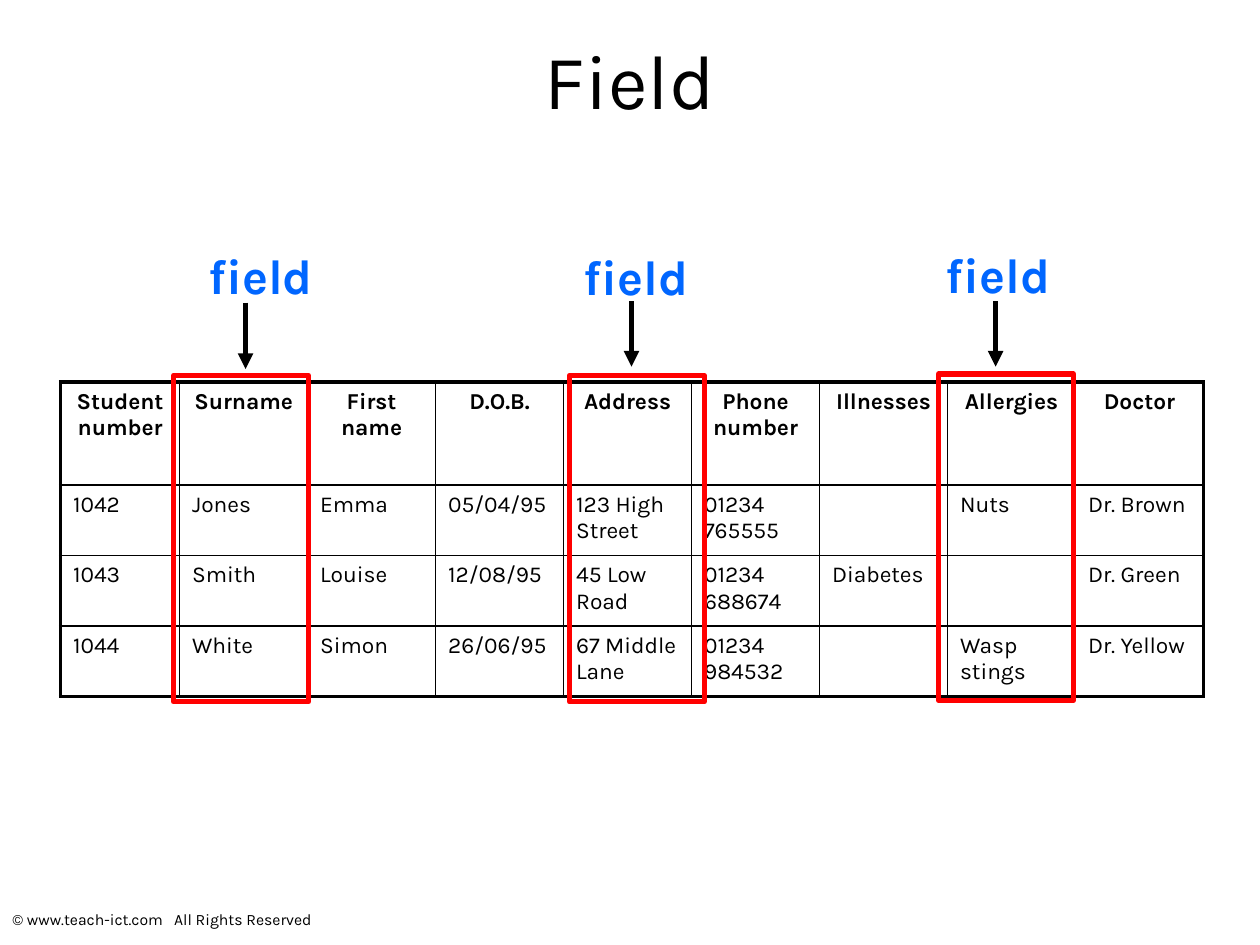
from dataclasses import dataclass

from lxml.etree import SubElement
from pptx import Presentation
from pptx.dml.color import RGBColor
from pptx.enum.shapes import MSO_CONNECTOR, MSO_SHAPE
from pptx.enum.text import MSO_ANCHOR, PP_ALIGN
from pptx.oxml.ns import qn
from pptx.slide import Slide
from pptx.table import _Cell
from pptx.text.text import _Paragraph
from pptx.util import Cm, Pt

FONT = "Karla"
BLACK, RED, BLUE = "000000", "FF0000", "0066FF"
OUTER_BORDER, INNER_BORDER = Pt(2.25), Pt(1)

FIRST_COLUMN_WIDTH, COLUMN_WIDTH = 2.4, 2.58
HEADER_HEIGHT, ROW_HEIGHT = 2.08, 1.42
RECORDS = [
    ["Student number", "Surname", "First name", "D.O.B.", "Address",
     "Phone number", "Illnesses", "Allergies", "Doctor"],
    ["1042", "Jones", "Emma", "05/04/95", "123 High Street",
     "01234 765555", "", "Nuts", "Dr. Brown"],
    ["1043", "Smith", "Louise", "12/08/95", "45 Low Road",
     "01234 688674", "Diabetes", "", "Dr. Green"],
    ["1044", "White", "Simon", "26/06/95", "67 Middle Lane",
     "01234 984532", "", "Wasp stings", "Dr. Yellow"],
]


@dataclass
class FieldMarker:
    """A highlighted column with its label and arrow, in centimetres."""
    frame_left: float
    frame_top: float
    label_left: float
    label_top: float
    arrow_x: float
    arrow_top: float
    arrow_bottom: float


MARKERS = [
    FieldMarker(3.5, 7.57, 3.4, 4.83, 4.95, 6.1, 7.44),
    FieldMarker(11.48, 7.57, 10.97, 4.85, 12.73, 6.07, 7.39),
    FieldMarker(18.92, 7.54, 18.26, 4.8, 20.07, 6.07, 7.39),
]


def color(value: str) -> RGBColor:
    return RGBColor.from_string(value)


def style_paragraph(paragraph: _Paragraph, size: float, value: str = BLACK,
                    bold: bool = False, align: PP_ALIGN = PP_ALIGN.LEFT) -> None:
    paragraph.alignment = align
    font = paragraph.font
    font.name, font.size, font.bold = FONT, Pt(size), bold
    font.color.rgb = color(value)


def add_text(slide: Slide, text: str, left: float, top: float, width: float,
             height: float, size: float, **style) -> None:
    box = slide.shapes.add_textbox(Cm(left), Cm(top), Cm(width), Cm(height))
    box.text_frame.word_wrap = True
    box.text_frame.text = text
    style_paragraph(box.text_frame.paragraphs[0], size, **style)


def set_borders(cell: _Cell, outer_sides: dict[str, bool]) -> None:
    """Draw each side thick where it lies on the table's edge, else thin."""
    properties = cell._tc.get_or_add_tcPr()
    for side, is_outer in outer_sides.items():
        width = OUTER_BORDER if is_outer else INNER_BORDER
        line = SubElement(properties, qn(f"a:{side}"), w=str(int(width)))
        fill = SubElement(line, qn("a:solidFill"))
        SubElement(fill, qn("a:srgbClr"), val=BLACK)


def add_records_table(slide: Slide) -> None:
    last_row, last_column = len(RECORDS) - 1, len(RECORDS[0]) - 1
    widths = [FIRST_COLUMN_WIDTH] + [COLUMN_WIDTH] * last_column
    heights = [HEADER_HEIGHT] + [ROW_HEIGHT] * last_row
    table = slide.shapes.add_table(
        len(heights), len(widths), Cm(1.22), Cm(7.7),
        Cm(sum(widths)), Cm(sum(heights))).table
    table.first_row = table.horz_banding = False
    for column, width in zip(table.columns, widths):
        column.width = Cm(width)
    for row, height in zip(table.rows, heights):
        row.height = Cm(height)

    for row_index, record in enumerate(RECORDS):
        is_header = row_index == 0
        for column_index, text in enumerate(record):
            cell = table.cell(row_index, column_index)
            cell.text = text
            style_paragraph(cell.text_frame.paragraphs[0], 13, bold=is_header,
                            align=PP_ALIGN.CENTER if is_header else PP_ALIGN.LEFT)
            set_borders(cell, {
                "lnL": column_index == 0,
                "lnR": column_index == last_column,
                "lnT": is_header,
                "lnB": row_index == last_row,
            })
            cell.fill.background()


def add_frame(slide: Slide, marker: FieldMarker) -> None:
    frame = slide.shapes.add_shape(
        MSO_SHAPE.RECTANGLE, Cm(marker.frame_left), Cm(marker.frame_top),
        Cm(2.72), Cm(6.58))
    frame.shadow.inherit = False
    frame.fill.background()
    frame.line.color.rgb = color(RED)
    frame.line.width = Pt(3)


def add_arrow(slide: Slide, marker: FieldMarker) -> None:
    arrow = slide.shapes.add_connector(
        MSO_CONNECTOR.STRAIGHT, Cm(marker.arrow_x), Cm(marker.arrow_top),
        Cm(marker.arrow_x), Cm(marker.arrow_bottom))
    arrow.line.color.rgb = color(BLACK)
    arrow.line.width = Pt(3)
    SubElement(arrow.line._get_or_add_ln(), qn("a:tailEnd"), type="triangle")
    SubElement(arrow._element.spPr, qn("a:effectLst"))


def add_title(slide: Slide, text: str) -> None:
    title = slide.shapes.title
    title.left, title.top, title.width, title.height = Cm(0), Cm(0), Cm(25.4), Cm(3.18)
    title.text_frame.text = text
    title.text_frame.vertical_anchor = MSO_ANCHOR.MIDDLE
    style_paragraph(title.text_frame.paragraphs[0], 44, align=PP_ALIGN.CENTER)


def main() -> None:
    presentation = Presentation()
    presentation.slide_width, presentation.slide_height = Cm(25.4), Cm(19.05)
    slide = presentation.slides.add_slide(
        presentation.slide_layouts.get_by_name("Title Only"))

    add_text(slide, "© www.teach-ict.com   All Rights Reserved",
             0, 18.21, 9.14, 0.64, size=9)
    add_title(slide, "Field")
    add_records_table(slide)
    for marker in MARKERS:
        add_frame(slide, marker)
        add_text(slide, "field", marker.label_left, marker.label_top, 3.71, 1.45,
                 size=28, value=BLUE, bold=True, align=PP_ALIGN.CENTER)
        add_arrow(slide, marker)

    presentation.save("out.pptx")


if __name__ == "__main__":
    main()
